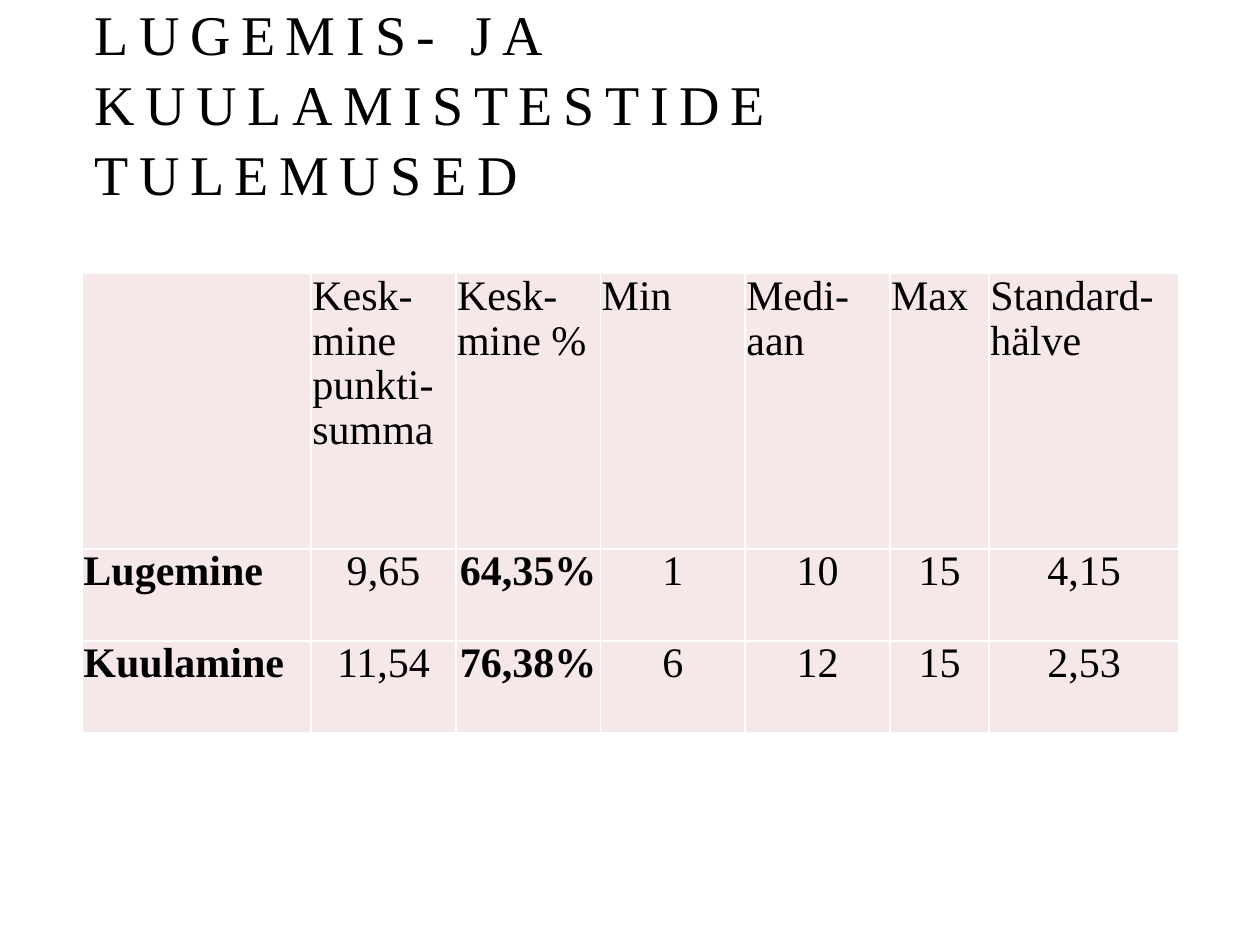
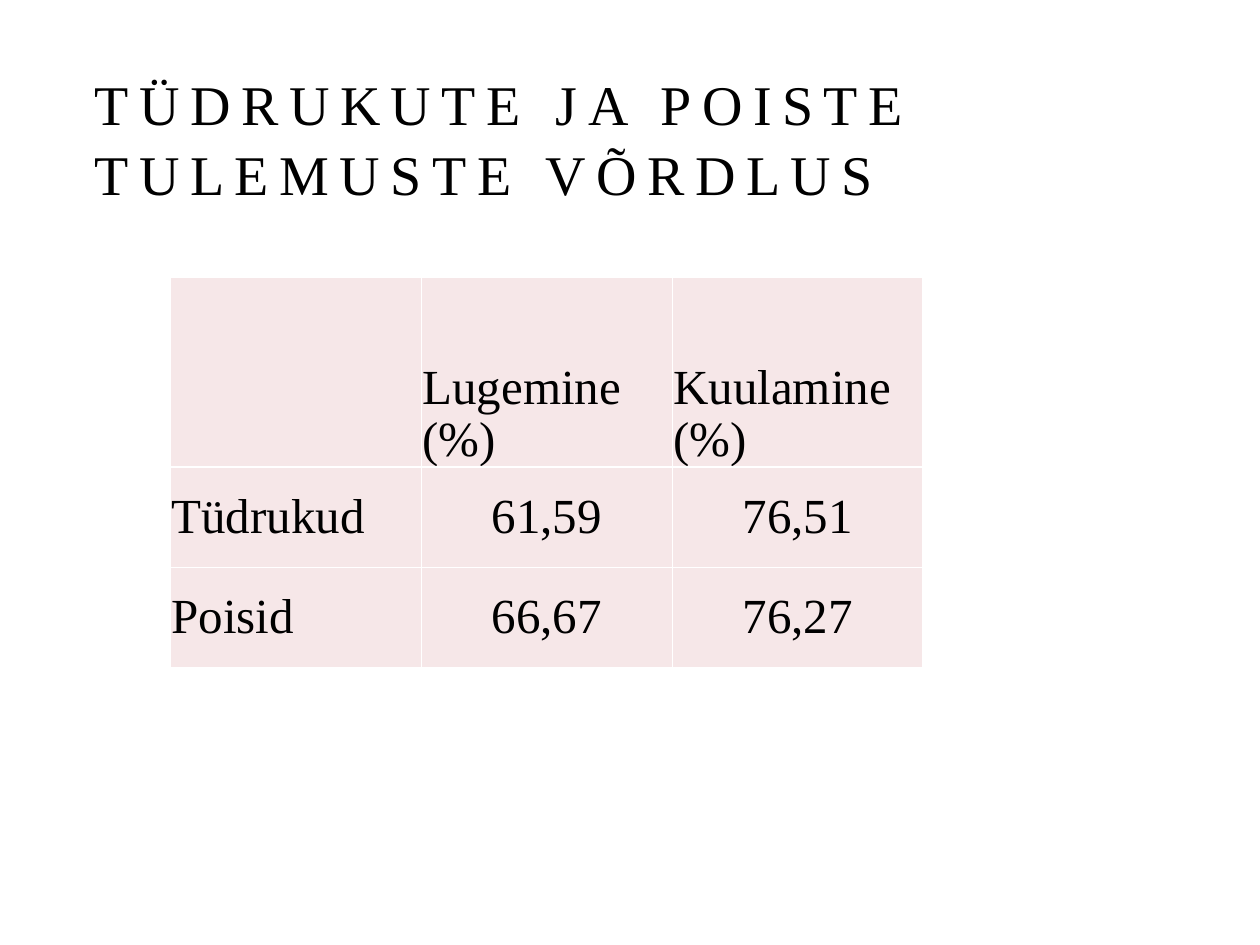
from lxml.etree import SubElement
from pptx import Presentation
from pptx.dml.color import RGBColor
from pptx.enum.text import MSO_ANCHOR as ANCHOR, MSO_AUTO_SIZE as AUTO_SIZE, PP_ALIGN as ALIGN
from pptx.oxml.ns import qn
from pptx.util import Pt

BLACK = RGBColor(0x00, 0x00, 0x00)
WHITE = RGBColor(0xFF, 0xFF, 0xFF)
PINK = RGBColor(0xF6, 0xE7, 0xE8)
FONT = "Times New Roman"
TITLE_BOX = (46.8, 24.5, 627.1, 97.2)
TITLE_ONLY = 5

TEST_RESULTS = [
    ["", "Kesk-mine punkti-summa", "Kesk-mine %", "Min", "Medi-aan", "Max", "Standard-hälve"],
    ["Lugemine", "9,65", "64,35%", "1", "10", "15", "4,15"],
    ["Kuulamine", "11,54", "76,38%", "6", "12", "15", "2,53"],
]
GENDER_RESULTS = [
    ["", "Lugemine (%)", "Kuulamine (%)"],
    ["Tüdrukud", "61,59", "76,51"],
    ["Poisid", "66,67", "76,27"],
]


def format_paragraph(paragraph, size, alignment, line_spacing, bold=False):
    paragraph.alignment = alignment
    paragraph.line_spacing = line_spacing
    for run in paragraph.runs:
        run.font.name = FONT
        run.font.size = Pt(size)
        run.font.bold = bold
        run.font.color.rgb = BLACK


def add_titled_slide(presentation, text, box):
    slide = presentation.slides.add_slide(presentation.slide_layouts[TITLE_ONLY])
    title = slide.shapes.title
    title.left, title.top, title.width, title.height = map(Pt, box)
    frame = title.text_frame
    frame.text = text
    frame.word_wrap = True
    frame.auto_size = AUTO_SIZE.NONE
    frame.vertical_anchor = ANCHOR.BOTTOM
    paragraph = frame.paragraphs[0]
    format_paragraph(paragraph, 32, ALIGN.LEFT, 1.04)
    for run in paragraph.runs:
        run._r.get_or_add_rPr().set("spc", "600")
    return slide


def add_cell_borders(cell):
    properties = cell._tc.get_or_add_tcPr()
    for side in ("a:lnL", "a:lnR", "a:lnT", "a:lnB"):
        line = SubElement(properties, qn(side), w=str(Pt(1)))
        fill = SubElement(line, qn("a:solidFill"))
        SubElement(fill, qn("a:srgbClr"), val=str(WHITE))


def format_cell(cell, text, size, anchor, alignment, bold):
    add_cell_borders(cell)
    cell.fill.solid()
    cell.fill.fore_color.rgb = PINK
    cell.margin_left = cell.margin_right = cell.margin_top = Pt(0.7)
    cell.margin_bottom = 0
    cell.vertical_anchor = anchor
    if text:
        cell.text_frame.text = text
        format_paragraph(cell.text_frame.paragraphs[0], size, alignment, 0.96, bold)


def add_results_table(slide, rows, position, widths, heights, size,
                      header_anchor, body_anchor, bold_columns=()):
    left, top = position
    table = slide.shapes.add_table(len(rows), len(widths), Pt(left), Pt(top),
                                   Pt(sum(widths)), Pt(sum(heights))).table
    table.first_row = table.horz_banding = False
    for column, width in zip(table.columns, widths):
        column.width = Pt(width)
    for row, height in zip(table.rows, heights):
        row.height = Pt(height)
    for row_index, values in enumerate(rows):
        is_header = row_index == 0
        for column_index, text in enumerate(values):
            is_label = is_header or column_index == 0
            format_cell(table.cell(row_index, column_index), text, size,
                        header_anchor if is_header else body_anchor,
                        ALIGN.LEFT if is_label else ALIGN.CENTER,
                        not is_header and column_index in bold_columns)


def main():
    presentation = Presentation()
    presentation.slide_width, presentation.slide_height = Pt(720), Pt(540)

    slide = add_titled_slide(presentation, "LUGEMIS- JA KUULAMISTESTIDE TULEMUSED", TITLE_BOX)
    add_results_table(slide, TEST_RESULTS, (47, 156.4),
                      [130.8] + [82.7] * 4 + [56.7, 108.5], [157.4, 52.6, 52.6],
                      24, ANCHOR.TOP, ANCHOR.TOP, bold_columns=(0, 2))

    slide = add_titled_slide(presentation, "TÜDRUKUTE JA POISTE TULEMUSTE VÕRDLUS", TITLE_BOX)
    add_results_table(slide, GENDER_RESULTS, (97.4, 158.6),
                      [143.4] * 3, [108.4, 57.2, 57.2],
                      28, ANCHOR.BOTTOM, ANCHOR.MIDDLE)

    presentation.save("out.pptx")


if __name__ == "__main__":
    main()
